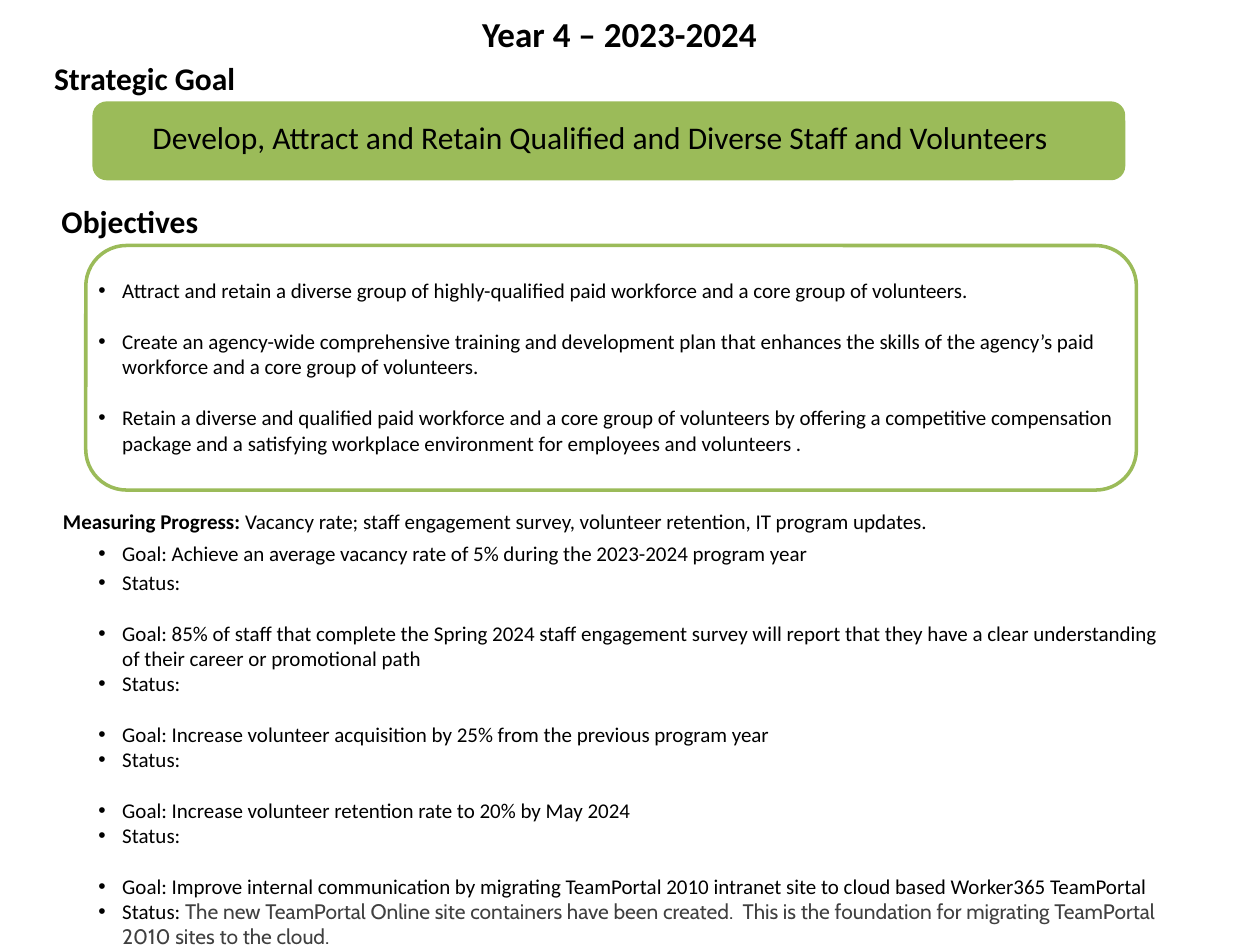
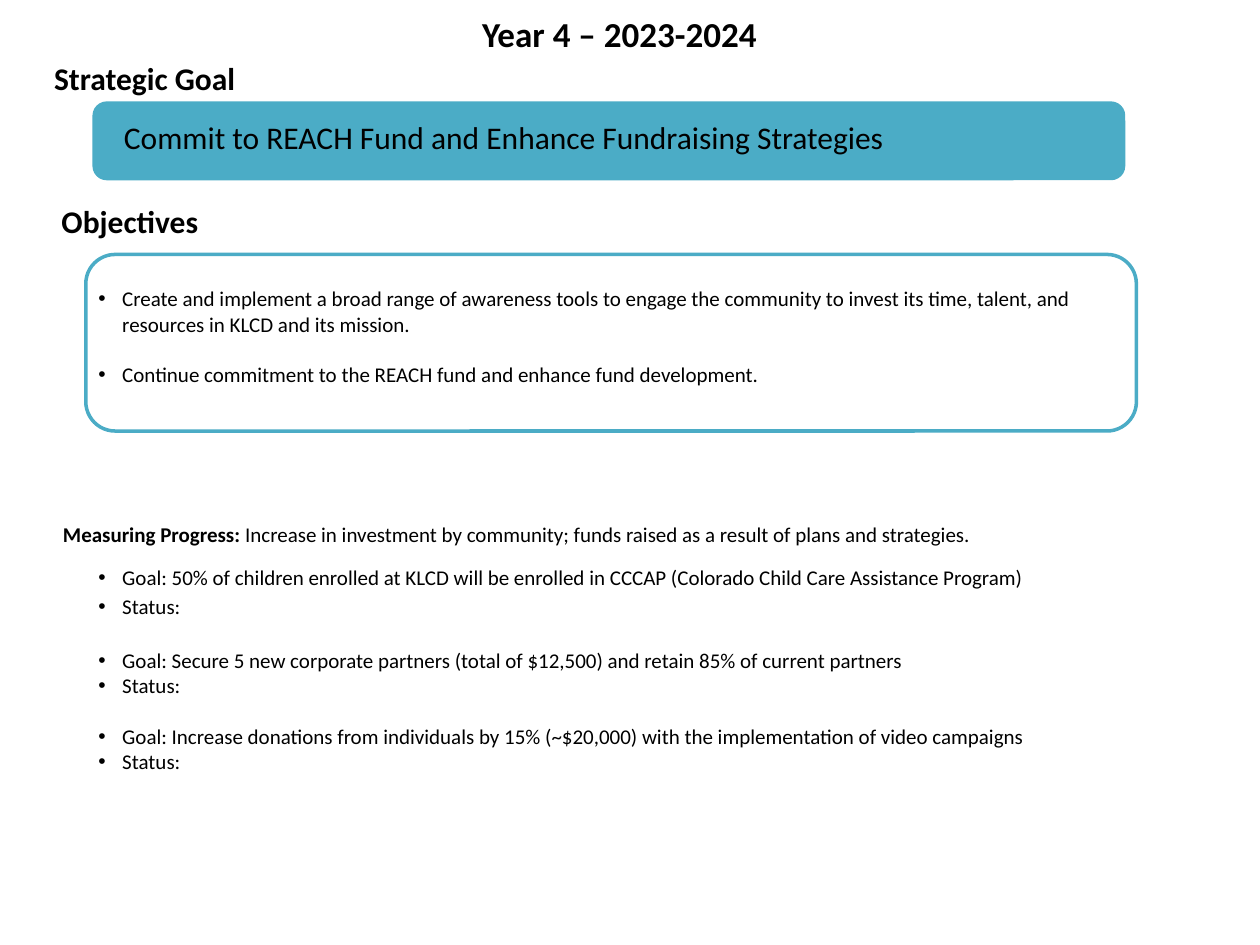
from pptx import Presentation
from pptx.dml.color import RGBColor
from pptx.enum.shapes import MSO_SHAPE as Shape
from pptx.enum.text import MSO_ANCHOR as Anchor, MSO_AUTO_SIZE as AutoSize, PP_ALIGN as Align
from pptx.util import Cm, Pt

BLACK = RGBColor(0x00, 0x00, 0x00)
GREY = RGBColor(0x40, 0x40, 0x40)
GREEN = RGBColor(0x9B, 0xBB, 0x59)
BLUE = RGBColor(0x4B, 0xAC, 0xC6)
FONT, STATUS_FONT = "Calibri", "Cabin"
BLANK_LINE = 14.65

YEAR = "Year 4 – 2023-2024"
HEADINGS = [("Strategic Goal", 0.84, 1.07), ("Objectives", 0.99, 3.94)]
BAND = (1.9, 2.08, 20.75, 1.52)

PAGES = [
    {
        "color": GREEN,
        "title": "Develop, Attract and Retain Qualified and Diverse Staff and Volunteers",
        "title_box": (1.98, 1.9, 20.24, 1.73),
        "outline": (1.73, 4.95, 21.18, 4.93),
        "objectives_box": (1.73, 4.9, 21.59, 4.98),
        "objectives": [
            "Attract and retain a diverse group of highly-qualified paid workforce and a core group of volunteers.",
            "Create an agency-wide comprehensive training and development plan that enhances the skills of "
            "the agency’s paid workforce and a core group of volunteers.",
            "Retain a diverse and qualified paid workforce and a core group of volunteers by offering a competitive "
            "compensation package and a satisfying workplace environment for employees and volunteers .",
        ],
        "measure_top": 10.13,
        "measure": "Vacancy rate; staff engagement survey, volunteer retention, IT program updates.",
        "goals_box": (1.73, 10.69, 22.07, 8.61),
        "first_gap": BLANK_LINE,
        "goals": [
            ("Achieve an average vacancy rate of 5% during the 2023-2024 program year", ""),
            ("85% of staff that complete the Spring 2024 staff engagement survey will report that they have "
             "a clear understanding of their career or promotional path", ""),
            ("Increase volunteer acquisition by 25% from the previous program year", ""),
            ("Increase volunteer retention rate to 20% by May 2024", ""),
            ("Improve internal communication by migrating TeamPortal 2010 intranet site to cloud based "
             "Worker365 TeamPortal",
             "The new TeamPortal Online site containers have been created.  This is the foundation for "
             "migrating TeamPortal 2010 sites to the cloud."),
        ],
    },
    {
        "color": BLUE,
        "title": "Commit to REACH Fund and Enhance Fundraising Strategies",
        "title_box": (1.27, 1.9, 17.78, 1.73),
        "outline": (1.73, 5.13, 21.18, 3.56),
        "objectives_box": (1.73, 4.55, 21.59, 4.47),
        "objectives": [
            "Create and implement a broad range of awareness tools to engage the community to invest its time, "
            "talent, and resources in KLCD and its mission.",
            "Continue commitment to the REACH fund and enhance fund development.",
        ],
        "measure_top": 10.39,
        "measure": "Increase in investment by community; funds raised as a result of plans and strategies.",
        "goals_box": (1.73, 11.18, 22.07, 4.6),
        "first_gap": 16.5,
        "goals": [
            ("50% of children enrolled at KLCD will be enrolled in CCCAP (Colorado Child Care Assistance Program)", ""),
            ("Secure 5 new corporate partners (total of $12,500) and retain 85% of current partners", ""),
            ("Increase donations from individuals by 15% (~$20,000) with the implementation of video campaigns", ""),
        ],
    },
]


def add_run(p, text, size=12, bold=False, font=FONT, color=BLACK):
    r = p.add_run()
    r.text = text
    r.font.size = Pt(size)
    r.font.bold = bold
    r.font.name = font
    r.font.color.rgb = color


def add_round_rect(slide, box, color, filled):
    s = slide.shapes.add_shape(Shape.ROUNDED_RECTANGLE, *map(Cm, box))
    s.shadow.inherit = False
    s.line.color.rgb = color
    s.line.width = Pt(2)
    if filled:
        s.fill.solid()
        s.fill.fore_color.rgb = color
    else:
        s.fill.background()


def add_label(slide, box, runs):
    tf = slide.shapes.add_textbox(*map(Cm, box)).text_frame
    tf.word_wrap = True
    tf.auto_size = AutoSize.SHAPE_TO_FIT_TEXT
    for text, size, bold in runs:
        add_run(tf.paragraphs[0], text, size, bold)


def place(slide, sp, box, anchor):
    sp.left, sp.top, sp.width, sp.height = map(Cm, box)
    slide.shapes._spTree.append(sp._element)
    tf = sp.text_frame
    tf.word_wrap = True
    tf.auto_size = AutoSize.NONE
    tf.vertical_anchor = anchor
    return tf


def add_bullet(tf, first, gap=0, spacing=1.0):
    p = tf.paragraphs[0] if first else tf.add_paragraph()
    pPr = p._p.get_or_add_pPr()
    pPr.set("marL", str(Cm(0.48)))
    pPr.set("indent", str(-Cm(0.48)))
    p.space_before = Pt(gap)
    p.line_spacing = spacing
    return p


def add_objectives(tf, objectives):
    for i, text in enumerate(objectives):
        add_run(add_bullet(tf, i == 0, BLANK_LINE if i else 0), text)


def add_goals(tf, goals, first_gap):
    for i, (goal, status) in enumerate(goals):
        gap = (0, first_gap)[i] if i < 2 else BLANK_LINE
        spacing = 1.0 if i else 1.15
        add_run(add_bullet(tf, i == 0, gap, spacing), "Goal: " + goal)
        p = add_bullet(tf, False, 0, spacing)
        add_run(p, "Status: " if status else "Status:")
        if status:
            add_run(p, status, font=STATUS_FONT, color=GREY)


def build_page(prs, page):
    slide = prs.slides.add_slide(prs.slide_layouts[3])
    title, objectives, goals = list(slide.placeholders)[:3]
    add_round_rect(slide, BAND, page["color"], True)
    tf = place(slide, title, page["title_box"], Anchor.MIDDLE)
    tf.paragraphs[0].alignment = Align.CENTER
    add_run(tf.paragraphs[0], page["title"], 18)

    for text, left, top in HEADINGS:
        add_label(slide, (left, top, 10.36, 1.02), [(text, 18, True)])
    add_round_rect(slide, page["outline"], page["color"], False)
    add_objectives(place(slide, objectives, page["objectives_box"], Anchor.MIDDLE), page["objectives"])

    add_label(slide, (1.02, page["measure_top"], 22.48, 0.76),
              [("Measuring Progress: ", 12, True), (page["measure"], 12, False)])
    add_goals(place(slide, goals, page["goals_box"], Anchor.TOP), page["goals"], page["first_gap"])
    add_label(slide, (9.47, 0.13, 6.15, 1.12), [(YEAR, 20, True)])


def main():
    prs = Presentation()
    prs.slide_width, prs.slide_height = Cm(25.4), Cm(19.05)
    for page in PAGES:
        build_page(prs, page)
    prs.save("out.pptx")


if __name__ == "__main__":
    main()
